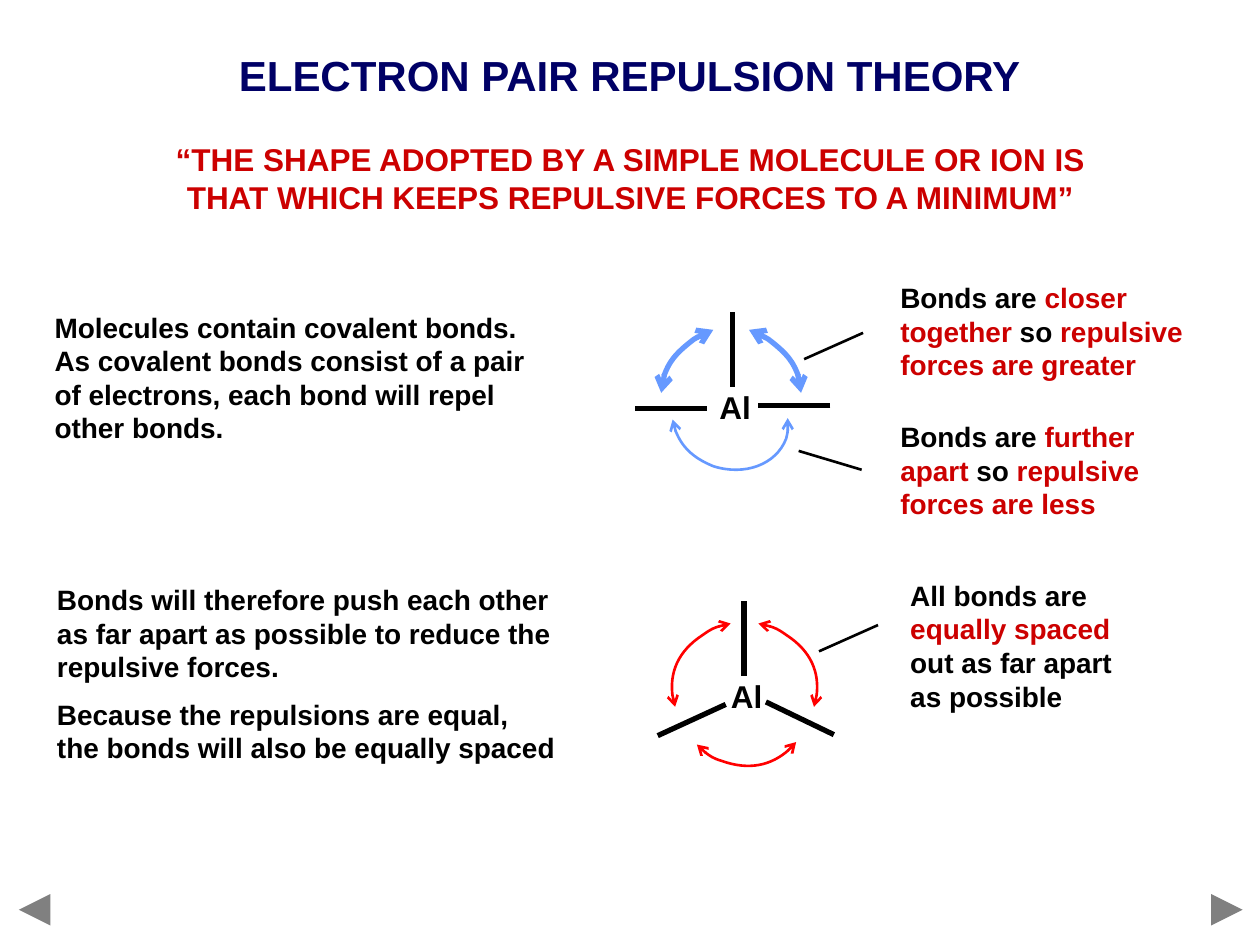
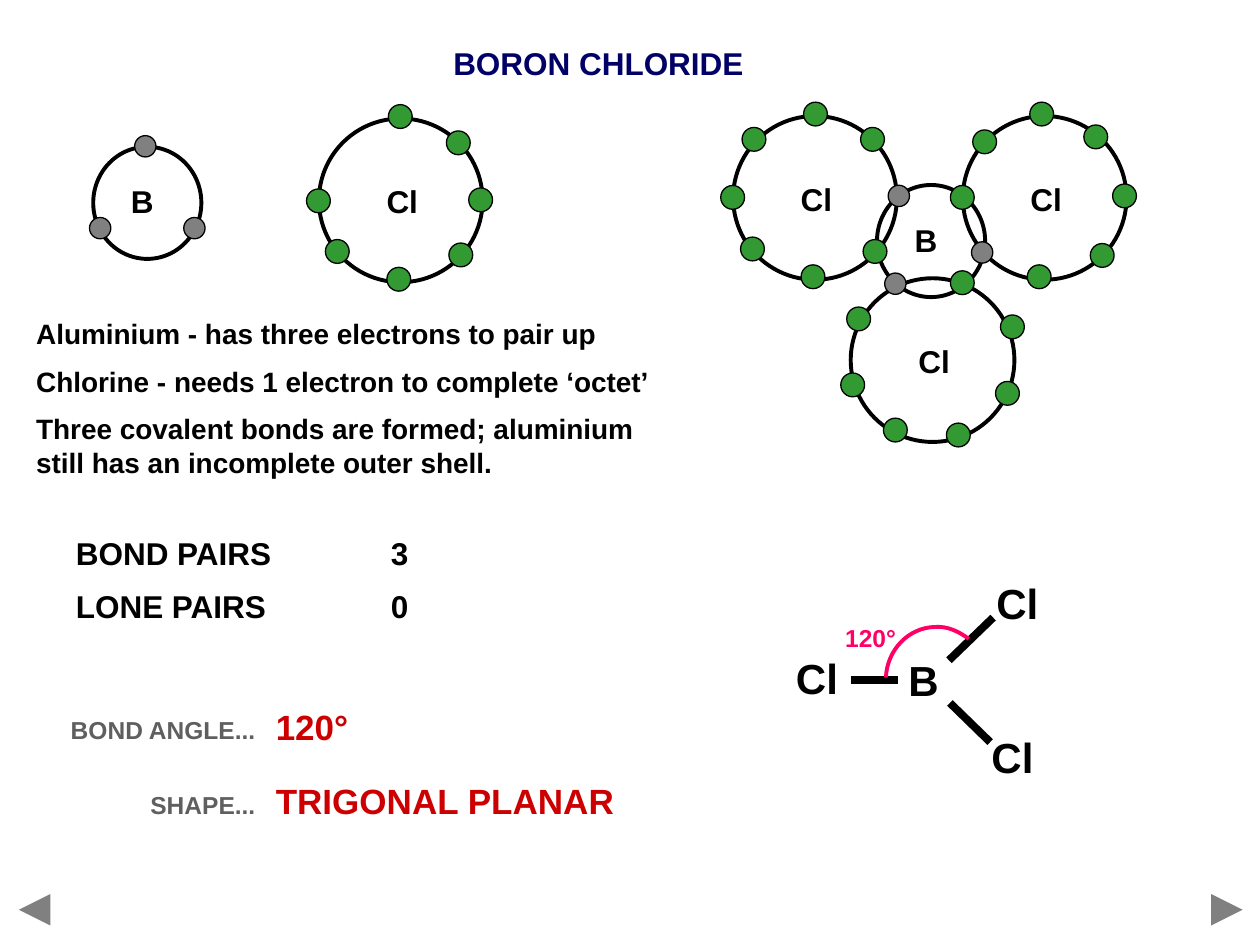
"""Builds two chemistry slides on electron pair repulsion and boron chloride."""
from lxml import etree
from pptx import Presentation
from pptx import util as u
from pptx.dml.color import RGBColor
from pptx.enum import shapes, text
from pptx.oxml import ns

COLOURS = {
    "black": "000000", "navy": "000066", "crimson": "CC0000", "red": "FF0000",
    "sky": "6699FF", "pink": "FF0066", "grey": "808080", "slate": "5F5F5F",
    "green": "339933",
}
FONT = {"name": "Arial", "bold": True}
LEFT, CENTRE, RIGHT = text.PP_ALIGN.LEFT, text.PP_ALIGN.CENTER, text.PP_ALIGN.RIGHT
TOP, MIDDLE = text.MSO_ANCHOR.TOP, text.MSO_ANCHOR.MIDDLE
BOND_AXIS = -0.05
ATOMS = {
    "B": {"size": (2.18, 2.26), "label": (-0.1, -0.03), "electron": 0.43, "fill": "grey"},
    "Cl": {"size": (3.3, 3.3), "label": (0.03, 0.02), "electron": 0.48, "fill": "green"},
}


def rgb(colour):
    """Return the named colour."""
    return RGBColor.from_string(COLOURS[colour])


def apply(target, values):
    """Set every attribute in the dict on the target."""
    for name, value in values.items():
        setattr(target, name, value)


def around(x, y, width, height):
    """Return the box of a given size centred on a point."""
    return x - width / 2, y - height / 2, width, height


def place(shape, box):
    """Move a shape to a box given in centimetres."""
    apply(shape, dict(zip(("left", "top", "width", "height"), map(u.Cm, box))))


def write(shape, paragraphs, size, colour="black", align=LEFT, anchor=TOP, spacing=None):
    """Fill a shape with paragraphs, each a string or a list of (words, colour)."""
    frame = shape.text_frame
    apply(frame, {"word_wrap": True, "vertical_anchor": anchor})
    for index, content in enumerate(paragraphs):
        para = frame.add_paragraph() if index else frame.paragraphs[0]
        apply(para, {"alignment": align, "space_before": u.Pt(size / 2 if index else 0)})
        if spacing:
            para.line_spacing = u.Pt(spacing)
        for words, shade in [(content, colour)] if isinstance(content, str) else content:
            span = para.add_run()
            span.text = words
            apply(span.font, {**FONT, "size": u.Pt(size)})
            span.font.color.rgb = rgb(shade)


def add_words(page, box, paragraphs, size, **layout):
    """Add a text box."""
    write(page.shapes.add_textbox(*map(u.Cm, box)), paragraphs, size, **layout)


def add_label(page, x, y, words, size=18, colour="black"):
    """Add a short label centred on a point."""
    add_words(page, around(x, y, 1.6, 1.2), [words], size,
              colour=colour, align=CENTRE, anchor=MIDDLE)


def style_line(shape, colour, width, head=None, tail=None):
    """Colour an outline and give it arrowheads."""
    shape.line.color.rgb = rgb(colour)
    shape.line.width = u.Pt(width)
    for tag, kind in (("a:headEnd", head), ("a:tailEnd", tail)):
        if kind:
            etree.SubElement(shape.line._get_or_add_ln(), ns.qn(tag), type=kind)


def add_line(page, start, end, colour="black", width=1.5, tail=None):
    """Add a straight line between two points."""
    line = page.shapes.add_connector(
        shapes.MSO_CONNECTOR.STRAIGHT, *map(u.Cm, (*start, *end)))
    style_line(line, colour, width, tail=tail)
    etree.SubElement(line._element.spPr, ns.qn("a:effectLst"))


def bend(curve):
    """Turn each three straight segments of a freeform into one cubic curve."""
    segments = list(curve._element.iter(ns.qn("a:lnTo")))
    for first in range(0, len(segments), 3):
        cubic = etree.Element(ns.qn("a:cubicBezTo"))
        segments[first].addprevious(cubic)
        for segment in segments[first:first + 3]:
            cubic.append(segment[0])
            segment.getparent().remove(segment)


def add_curve(page, x, y, points, colour, width, arrow=None):
    """Add an open chain of cubic curves with points relative to (x, y)."""
    track = [(u.Cm(x + dx), u.Cm(y + dy)) for dx, dy in points]
    builder = page.shapes.build_freeform(*track[0])
    builder.add_line_segments(track[1:], close=False)
    curve = builder.convert_to_shape()
    bend(curve)
    curve.fill.background()
    curve.shadow.inherit = False
    style_line(curve, colour, width, arrow, arrow)


def add_circle(page, box, width, fill=None):
    """Add an outlined ellipse, filled when a colour is given."""
    circle = page.shapes.add_shape(shapes.MSO_SHAPE.OVAL, *map(u.Cm, box))
    circle.shadow.inherit = False
    if fill:
        circle.fill.solid()
        circle.fill.fore_color.rgb = rgb(fill)
    else:
        circle.fill.background()
    style_line(circle, "black", width)


def add_page(deck, title, box, size, anchor):
    """Add a slide with its title and navigation arrows."""
    page = deck.slides.add_slide(deck.slide_layouts[5])
    place(page.shapes.title, box)
    write(page.shapes.title, [title], size, colour="navy", align=CENTRE, anchor=anchor)
    for start, end in ((24.51, 25.05), (0.91, 0.38)):
        add_line(page, (start, 18.34), (end, 18.34), "grey", 6, tail="triangle")
    return page


def add_bonds(page, box, side_bonds, side_arc, arc_axis, lower_arc, colour, side_width):
    """Draw an aluminium atom in the middle of the box with bonds and repulsions."""
    left, top, width, height = box
    x, y = left + width / 2, top + height / 2
    add_label(page, x, y, "Al")
    for x1, y1, x2, y2 in [(BOND_AXIS, -1.9, BOND_AXIS, -0.39), *side_bonds]:
        add_line(page, (x + x1, y + y1), (x + x2, y + y2), width=3)
    mirrored = [(2 * arc_axis - dx, dy) for dx, dy in side_arc]
    for arc, weight in ((side_arc, side_width), (mirrored, side_width), (lower_arc, 1.5)):
        add_curve(page, x, y, arc, colour, weight, arrow="arrow")


def add_atoms(page, box, atoms):
    """Draw shells in the box, then the electrons placed from each shell's centre."""
    left, top = box[:2]
    for symbol, x, y, _ in atoms:
        kind = ATOMS[symbol]
        add_circle(page, around(left + x, top + y, *kind["size"]), 2.25)
        dx, dy = kind["label"]
        add_label(page, left + x + dx, top + y + dy, symbol)
    for symbol, x, y, electrons in atoms:
        kind = ATOMS[symbol]
        for dx, dy in electrons:
            spot = around(left + x + dx, top + y + dy, kind["electron"], kind["electron"])
            add_circle(page, spot, 0.75, kind["fill"])


def add_planar_shape(page, box):
    """Draw the trigonal planar molecule with its bond angle."""
    left, top = box[:2]
    for x1, y1, x2, y2 in ((1.45, 2.31, 2.41, 2.31), (3.43, 1.91, 4.32, 1.05),
                           (3.45, 2.77, 4.26, 3.56)):
        add_line(page, (left + x1, top + y1), (left + x2, top + y2), width=4.5)
    for symbol, x, y in (("Cl", 0.77, 2.26), ("B", 2.92, 2.31),
                         ("Cl", 4.81, 0.75), ("Cl", 4.71, 3.86)):
        add_label(page, left + x, top + y, symbol, 24)
    add_curve(page, left, top,
              [(2.16, 2.26), (2.18, 1.71), (2.61, 1.25), (3.15, 1.24),
               (3.4, 1.22), (3.63, 1.33), (3.83, 1.48)], "pink", 2.25)
    add_label(page, left + 1.85, top + 1.45, "120°", 14, "pink")


def build_theory(deck):
    """Build the slide on electron pair repulsion."""
    page = add_page(deck, "ELECTRON PAIR REPULSION THEORY", (4.02, 0.88, 17.35, 1.27), 24, TOP)
    add_words(page, (2.46, 2.7, 20.5, 2.41),
              ["“THE SHAPE ADOPTED BY A SIMPLE MOLECULE OR ION IS THAT WHICH KEEPS "
               "REPULSIVE FORCES TO A MINIMUM”"], 18, colour="crimson", align=CENTRE)
    add_words(page, (0.85, 6.13, 10.24, 2.74),
              ["Molecules contain covalent bonds. As covalent bonds consist of a pair "
               "of electrons, each bond will repel other bonds."], 16)
    add_words(page, (0.9, 11.62, 10.59, 3.99),
              ["Bonds will therefore push each other as far apart as possible to reduce "
               "the repulsive forces.",
               "Because the repulsions are equal, the bonds will also be equally spaced"], 16)
    add_bonds(page, (12.8, 6.3, 4.04, 3.8),
              [(-0.57, 0.03, -2.02, 0.03), (1.92, -0.02, 0.47, -0.02)],
              [(1.33, -0.28), (1.36, -0.64), (1.08, -1.05), (0.67, -1.36),
               (0.55, -1.43), (0.42, -1.5), (0.28, -1.55)], -0.08,
              [(1.06, 0.23), (1.08, 0.39), (1.06, 0.51), (1.03, 0.64), (0.83, 1.17),
               (0.19, 1.4), (-0.44, 1.2), (-0.88, 1.02), (-1.21, 0.66), (-1.26, 0.26)],
              "sky", 3)
    add_bonds(page, (13.03, 12.12, 4.04, 3.8),
              [(-0.42, 0.18, -1.79, 0.81), (0.39, 0.13, 1.76, 0.79)],
              [(1.36, 0.23), (1.54, -0.3), (1.31, -0.89), (0.8, -1.22),
               (0.62, -1.35), (0.44, -1.42), (0.24, -1.45)], -0.04,
              [(1, 0.94), (0.67, 1.37), (0.06, 1.52), (-0.5, 1.32),
               (-0.67, 1.27), (-0.88, 1.14), (-1, 0.99)],
              "red", 1.5)
    remarks = (
        ((17.9, 5.53, 6.45, 2.29), (16.21, 7.24), (17.4, 6.71),
         [("Bonds are ", "black"), ("closer together", "crimson"), (" so ", "black"),
          ("repulsive forces are greater", "crimson")]),
        ((17.9, 8.33, 5.66, 2.29), (16.1, 9.09), (17.37, 9.47),
         [("Bonds are ", "black"), ("further apart ", "crimson"), ("so ", "black"),
          ("repulsive forces are less", "crimson")]),
        ((18.1, 11.53, 5.26, 2.97), (16.51, 13.13), (17.7, 12.6),
         [("All bonds are ", "black"), ("equally spaced ", "crimson"),
          ("out as far apart as possible", "black")]),
    )
    for box, start, end, spans in remarks:
        add_words(page, box, [spans], 16, anchor=MIDDLE)
        add_line(page, start, end)


def build_chloride(deck):
    """Build the slide on boron chloride."""
    page = add_page(deck, "BORON CHLORIDE", (8.85, 0.76, 6.43, 1.02), 18, MIDDLE)
    add_atoms(page, (1.8, 2.1, 8.2, 3.8), [
        ("B", 1.17, 1.99, ((0.95, 0.51), (-0.04, -1.14), (-0.95, 0.51))),
        ("Cl", 6.28, 1.94, ((-0.01, -1.69), (-1.66, 0.01), (1.61, -0.01), (-0.04, 1.59),
                            (1.21, 1.1), (-1.28, 1.03), (1.16, -1.16)))])
    add_atoms(page, (14.5, 2, 8.5, 7.2), [
        ("B", 4.27, 2.86, ((-0.65, -0.91), (-0.72, 0.86), (1.03, 0.23))),
        ("Cl", 6.56, 1.99, ((-0.06, -1.69), (-1.66, -0.01), (1.61, -0.04), (-0.11, 1.59),
                            (1.16, 1.16), (-1.21, -1.13), (1.03, -1.23))),
        ("Cl", 4.3, 5.26, ((0.6, -1.56), (-1.61, 0.5), (1.61, -0.67), (0.52, 1.51),
                           (1.51, 0.67), (-0.75, 1.41), (-1.49, -0.83))),
        ("Cl", 1.93, 1.99, ((0.01, -1.69), (-1.66, -0.01), (-1.23, -1.18), (-0.04, 1.59),
                            (1.21, 1.08), (-1.26, 1.03), (1.16, -1.18)))])
    add_words(page, (0.48, 6.19, 13.06, 3.66),
              ["Aluminium - has three electrons to pair up",
               "Chlorine - needs 1 electron to complete ‘octet’",
               "Three covalent bonds are formed; aluminium still has an incomplete "
               "outer shell."], 16, anchor=MIDDLE)
    add_words(page, (1.28, 10.6, 8.48, 2.16), ["BOND PAIRS\t\t3", "LONE PAIRS\t\t0"], 18,
              anchor=MIDDLE)
    add_words(page, (1.1, 13.58, 4.3, 3.1), ["BOND ANGLE...", "SHAPE..."], 14,
              colour="slate", align=RIGHT, anchor=MIDDLE, spacing=36)
    add_words(page, (5.31, 13.78, 7.5, 2.95), ["120°", "TRIGONAL PLANAR"], 20,
              colour="crimson", anchor=MIDDLE, spacing=32)
    add_planar_shape(page, (15.7, 11.4, 5.9, 4.6))


def main():
    """Build and save the deck."""
    deck = Presentation()
    apply(deck, {"slide_width": u.Cm(25.4), "slide_height": u.Cm(19.05)})
    build_theory(deck)
    build_chloride(deck)
    deck.save("out.pptx")


if __name__ == "__main__":
    main()
